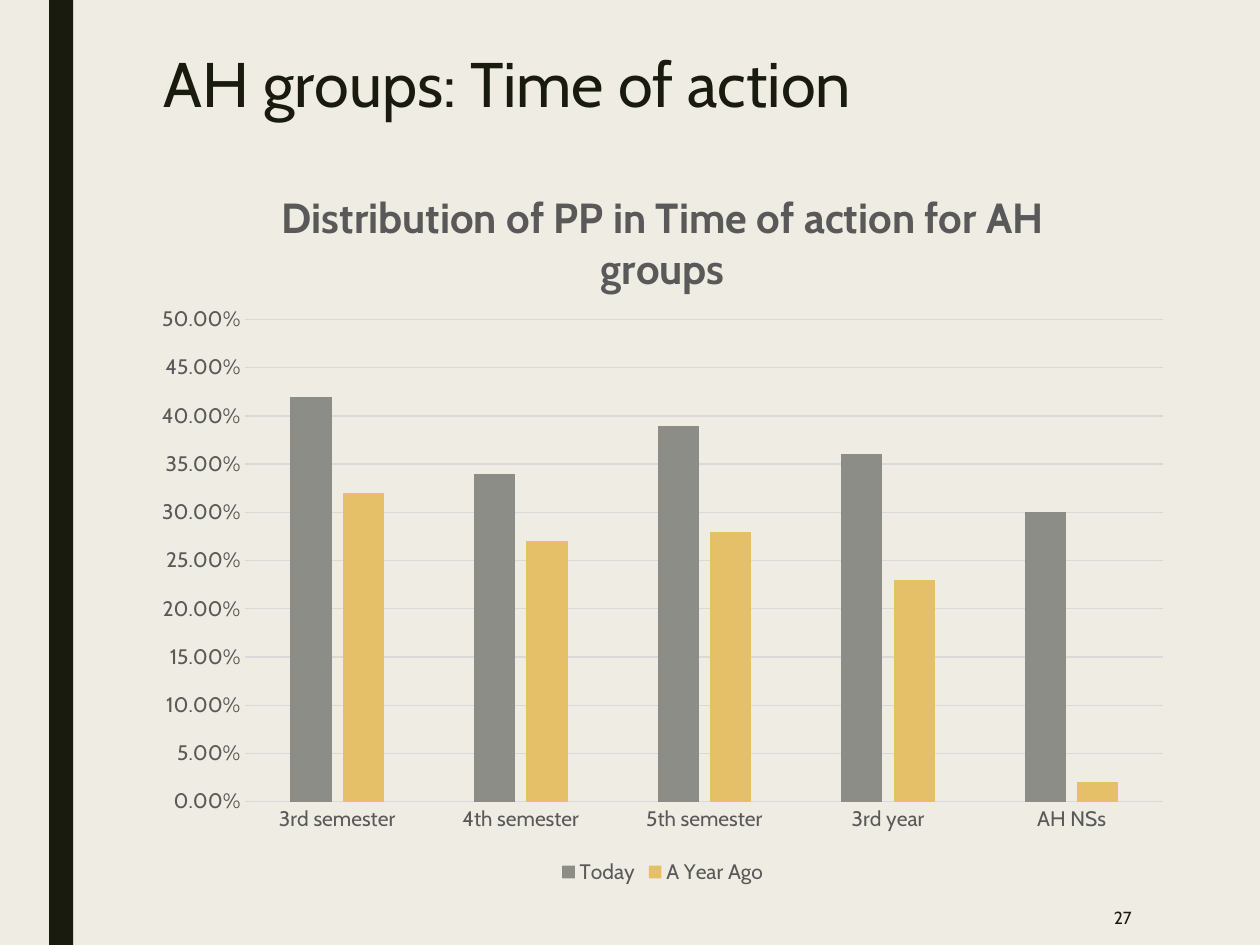
from pptx import Presentation
from pptx.chart.data import CategoryChartData
from pptx.dml.color import RGBColor
from pptx.enum.chart import XL_CHART_TYPE, XL_LEGEND_POSITION, XL_TICK_MARK
from pptx.enum.shapes import MSO_SHAPE
from pptx.enum.text import MSO_ANCHOR, PP_ALIGN
from pptx.oxml import parse_xml
from pptx.oxml.ns import nsdecls, qn
from pptx.util import Inches, Pt

TITLE = "AH groups: Time of action"
CHART_TITLE = "Distribution of PP in Time of action for AH groups"
PAGE = "27"
CATEGORIES = ["3rd semester", "4th semester", "5th semester", "3rd year", "AH NSs"]

FONT = "Cabin"
CREAM = RGBColor(0xEF, 0xED, 0xE3)
INK = RGBColor(0x19, 0x1B, 0x0E)
TEXT_GRAY = RGBColor(0x59, 0x59, 0x59)
RULE_GRAY = RGBColor(0xD9, 0xD9, 0xD9)
BAR_GRAY = RGBColor(0x8C, 0x8D, 0x86)
BAR_GOLD = RGBColor(0xE6, 0xC0, 0x69)

SERIES = [
    ("Today", BAR_GRAY, [0.42, 0.34, 0.39, 0.36, 0.3]),
    ("A Year Ago", BAR_GOLD, [0.32, 0.27, 0.28, 0.23, 0.02]),
]


def set_font(font, size, color, bold=False):
    font.name, font.size, font.bold = FONT, Pt(size), bold
    font.color.rgb = color


def add_text(s, text, box, size, color=INK, align=PP_ALIGN.LEFT,
             anchor=MSO_ANCHOR.TOP, spacing=1.0):
    tf = s.shapes.add_textbox(*map(Inches, box)).text_frame
    tf.word_wrap = True
    tf.vertical_anchor = anchor
    p = tf.paragraphs[0]
    p.alignment, p.line_spacing = align, spacing
    r = p.add_run()
    r.text = text
    set_font(r.font, size, color)


def manual_layout(target=None, **fractions):
    """Layout element placing a chart part by fractions of the chart's size."""
    parts = [("layoutTarget", target)] if target else []
    parts += [(f"{key}Mode", "edge") for key in ("x", "y")]
    parts += fractions.items()
    body = "".join(f'<c:{tag} val="{val}"/>' for tag, val in parts)
    return parse_xml(f'<c:layout {nsdecls("c")}><c:manualLayout>{body}'
                     "</c:manualLayout></c:layout>")


def style_line(line, color):
    line.color.rgb = color
    line.width = Pt(0.75)


def add_bar_chart(s, box):
    data = CategoryChartData(number_format="0.00%")
    data.categories = CATEGORIES
    for name, _, values in SERIES:
        data.add_series(name, values)
    chart = s.shapes.add_chart(XL_CHART_TYPE.COLUMN_CLUSTERED,
                               *map(Inches, box), data).chart
    set_font(chart.font, 12, TEXT_GRAY)

    title = chart.chart_title
    p = title.text_frame.paragraphs[0]
    r = p.add_run()
    r.text = CHART_TITLE
    set_font(r.font, 24, TEXT_GRAY, bold=True)
    title.include_in_layout = False
    title._element.find(qn("c:tx")).addnext(manual_layout(x=0.13, y=0.03))

    plot_area = chart._chartSpace.chart.plotArea
    for old in plot_area.findall(qn("c:layout")):
        plot_area.remove(old)
    plot_area.insert(0, manual_layout("inner", x=0.1, y=0.22, w=0.88, h=0.66))

    chart.has_legend = True
    chart.legend.position = XL_LEGEND_POSITION.BOTTOM
    chart.legend.include_in_layout = False
    set_font(chart.legend.font, 12, TEXT_GRAY)

    cat_axis, val_axis = chart.category_axis, chart.value_axis
    for axis in (cat_axis, val_axis):
        axis.major_tick_mark = axis.minor_tick_mark = XL_TICK_MARK.NONE
        set_font(axis.tick_labels.font, 12, TEXT_GRAY)
    style_line(cat_axis.format.line, RULE_GRAY)
    val_axis.format.line.fill.background()
    val_axis.minimum_scale, val_axis.maximum_scale = 0, 0.5
    val_axis.major_unit = 0.05
    style_line(val_axis.major_gridlines.format.line, RULE_GRAY)
    val_axis.tick_labels.number_format = "0.00%"
    val_axis.tick_labels.number_format_is_linked = False

    plot = chart.plots[0]
    plot.vary_by_categories = False
    plot.gap_width, plot.overlap = 219, -27
    for series, (_, color, _) in zip(plot.series, SERIES):
        series.format.fill.solid()
        series.format.fill.fore_color.rgb = color


def main():
    prs = Presentation()
    prs.slide_width, prs.slide_height = Inches(10), Inches(7.5)
    s = prs.slides.add_slide(prs.slide_layouts[6])
    s.background.fill.solid()
    s.background.fill.fore_color.rgb = CREAM

    band = s.shapes.add_shape(MSO_SHAPE.RECTANGLE, Inches(0.39), 0,
                              Inches(0.19), prs.slide_height)
    band.shadow.inherit = False
    band.fill.solid()
    band.fill.fore_color.rgb = INK
    band.line.fill.background()

    add_text(s, TITLE, (1.2, 0.38, 7.88, 0.74), 36, spacing=0.89)
    add_bar_chart(s, (1.12, 1.26, 8.28, 5.8))
    add_text(s, PAGE, (7.77, 7.06, 1.31, 0.44), 10,
             align=PP_ALIGN.RIGHT, anchor=MSO_ANCHOR.MIDDLE)
    prs.save("out.pptx")


if __name__ == "__main__":
    main()
